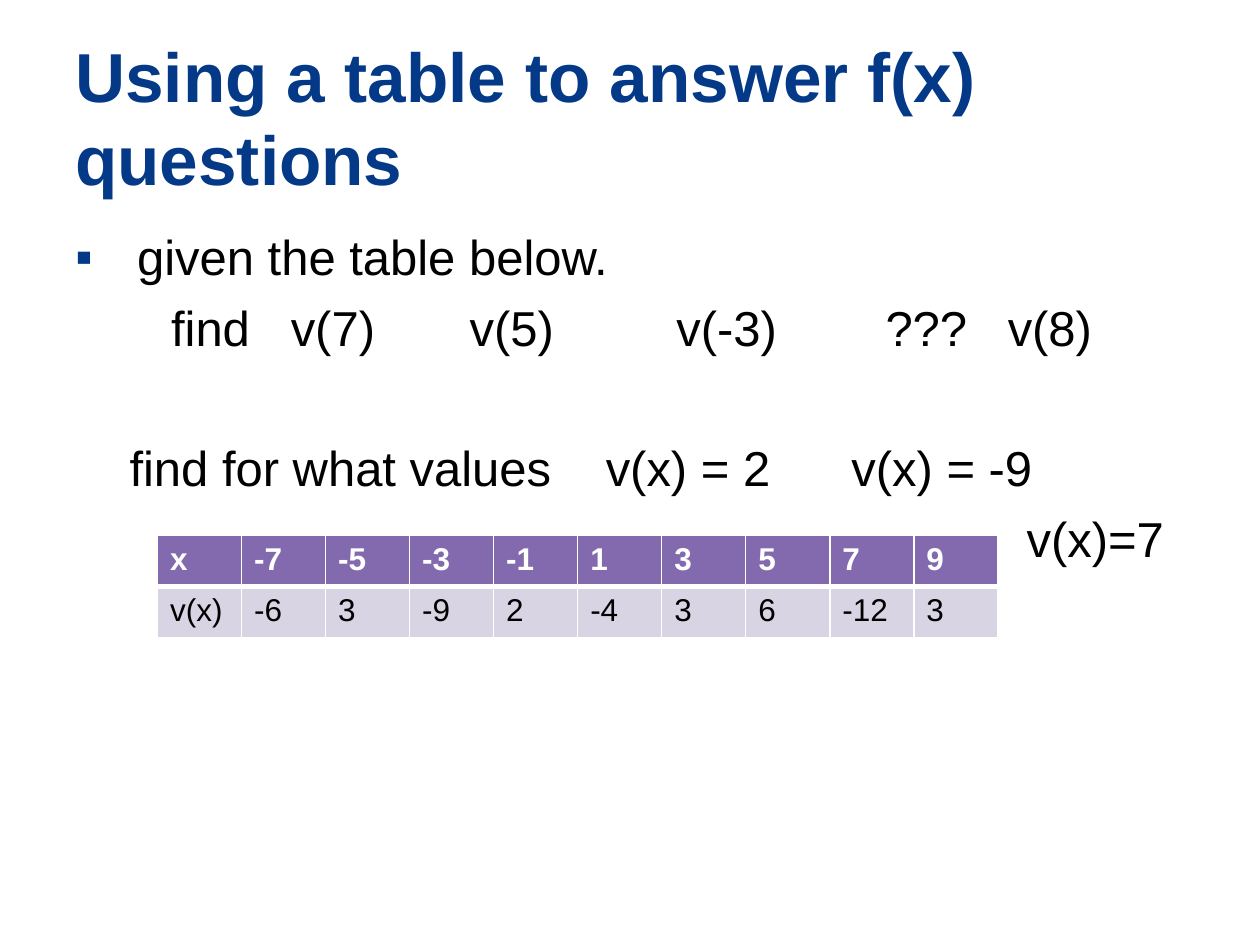
from dataclasses import dataclass

from lxml import etree
from pptx import Presentation
from pptx.dml.color import RGBColor
from pptx.enum.text import MSO_ANCHOR
from pptx.oxml.ns import qn
from pptx.util import Inches, Pt

MIDDLE = MSO_ANCHOR.MIDDLE
TOP = MSO_ANCHOR.TOP


@dataclass(frozen=True)
class Theme:
    font: str = "Arial"
    accent: str = "043988"
    ink: str = "000000"
    white: str = "FFFFFF"
    header_fill: str = "836AAE"
    body_fill: str = "D9D4E3"
    title_size: float = 39.6
    body_size: float = 28
    table_size: float = 18


THEME = Theme()
TITLE = "Using a table to answer f(x) questions"
FIRST_LINE = "given the table below."
BULLET_INDENT = 0.49
# Each line: space before in points, then (tab stop in inches, text) pairs.
QUESTION_LINES = [
    (7, [(0.76, "find"), (1.71, "v(7)"), (3.13, "v(5)"), (4.77, "v(-3)"),
         (6.43, "???"), (7.4, "v(8)")]),
    (46.3, [(0.43, "find for what values"), (4.21, "v(x) = 2"), (6.16, "v(x) = -9")]),
    (7, [(7.55, "v(x)=7")]),
]
VALUE_TABLE = [
    ["x", "-7", "-5", "-3", "-1", "1", "3", "5", "7", "9"],
    ["v(x)", "-6", "3", "-9", "2", "-4", "3", "6", "-12", "3"],
]


def format_runs(paragraph, size, color, bold=False):
    for run in paragraph.runs:
        run.font.name = THEME.font
        run.font.size = Pt(size)
        run.font.bold = bold
        run.font.color.rgb = RGBColor.from_string(color)


def add_text_frame(slide, box, anchor):
    text_frame = slide.shapes.add_textbox(*map(Inches, box)).text_frame
    text_frame.word_wrap = True
    text_frame.vertical_anchor = anchor
    return text_frame


def add_bullet(paragraph, indent):
    properties = paragraph._p.get_or_add_pPr()
    properties.set("marL", str(Inches(indent)))
    properties.set("indent", str(-Inches(indent)))
    color = etree.SubElement(properties, qn("a:buClr"))
    etree.SubElement(color, qn("a:srgbClr"), val=THEME.accent)
    etree.SubElement(properties, qn("a:buFont"), typeface=THEME.font)
    etree.SubElement(properties, qn("a:buChar"), char="▪")


def add_tab_stops(paragraph, positions):
    tab_list = etree.SubElement(paragraph._p.get_or_add_pPr(), qn("a:tabLst"))
    for position in positions:
        etree.SubElement(tab_list, qn("a:tab"), pos=str(Inches(position)), algn="l")


def set_borders(cell, bottom_width):
    """Outline a cell in white; the borders must precede its fill."""
    properties = cell._tc.get_or_add_tcPr()
    for side, width in (("L", 1), ("R", 1), ("T", 1), ("B", bottom_width)):
        line = etree.SubElement(properties, qn(f"a:ln{side}"), w=str(Pt(width)))
        fill = etree.SubElement(line, qn("a:solidFill"))
        etree.SubElement(fill, qn("a:srgbClr"), val=THEME.white)


def add_title(slide, box):
    text_frame = add_text_frame(slide, box, MIDDLE)
    text_frame.text = TITLE
    format_runs(text_frame.paragraphs[0], THEME.title_size, THEME.accent, bold=True)


def add_questions(slide, box):
    text_frame = add_text_frame(slide, box, TOP)
    first = text_frame.paragraphs[0]
    first.text = FIRST_LINE
    first.space_before = Pt(3)
    add_bullet(first, BULLET_INDENT)
    for space_before, parts in QUESTION_LINES:
        paragraph = text_frame.add_paragraph()
        paragraph.text = "".join(f"\t{text}" for _, text in parts)
        paragraph.space_before = Pt(space_before)
        add_tab_stops(paragraph, [position for position, _ in parts])
    for paragraph in text_frame.paragraphs:
        format_runs(paragraph, THEME.body_size, THEME.ink)


def add_value_table(slide, box):
    row_count, column_count = len(VALUE_TABLE), len(VALUE_TABLE[0])
    table = slide.shapes.add_table(row_count, column_count, *map(Inches, box)).table
    for row, values in enumerate(VALUE_TABLE):
        is_header = row == 0
        for column, value in enumerate(values):
            cell = table.cell(row, column)
            cell.text = value
            set_borders(cell, 3 if is_header else 1)
            cell.fill.solid()
            cell.fill.fore_color.rgb = RGBColor.from_string(
                THEME.header_fill if is_header else THEME.body_fill)
            format_runs(cell.text_frame.paragraphs[0], THEME.table_size,
                        THEME.white if is_header else THEME.ink, bold=is_header)


def main():
    presentation = Presentation()
    presentation.slide_width = Inches(10)
    presentation.slide_height = Inches(7.5)
    slide = presentation.slides.add_slide(presentation.slide_layouts[6])
    add_title(slide, (0.5, 0.3, 9, 1.25))
    add_questions(slide, (0.5, 1.75, 9, 4.95))
    add_value_table(slide, (1.25, 4.25, 6.67, 0.81))
    presentation.save("out.pptx")


if __name__ == "__main__":
    main()
